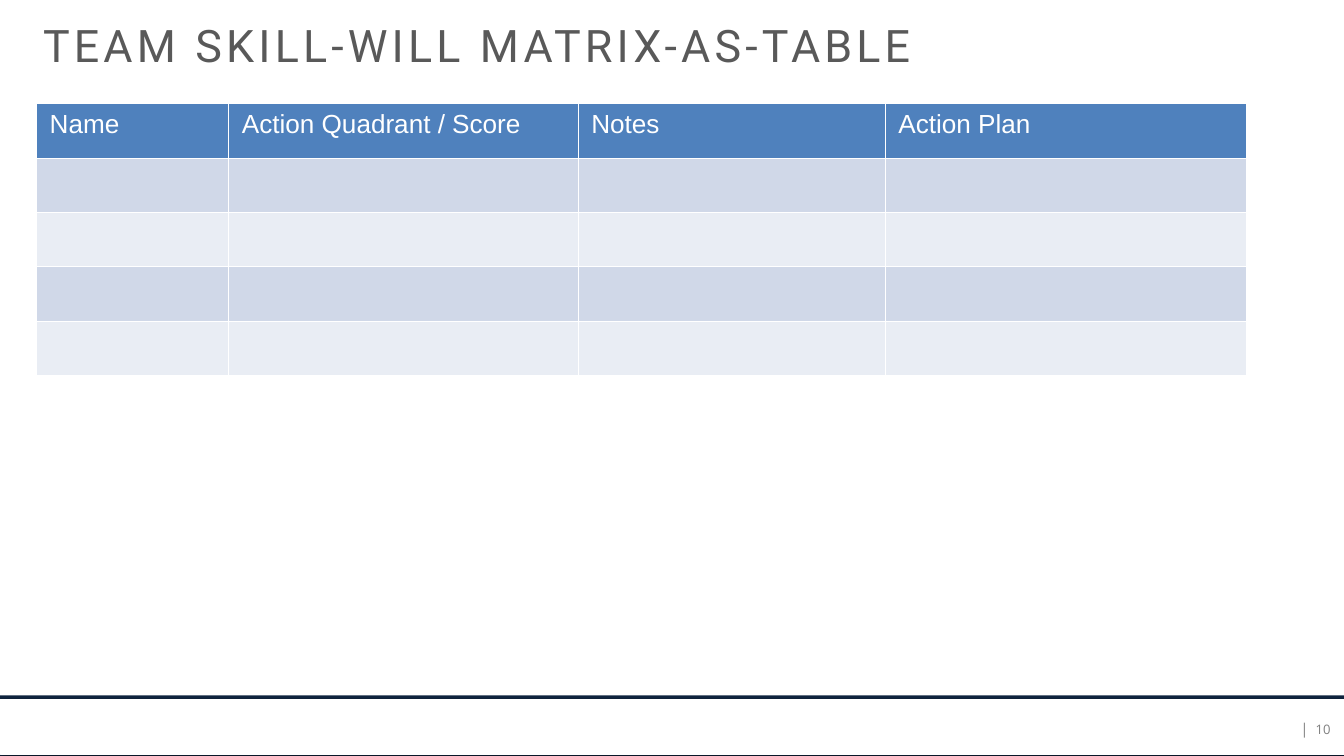
from lxml.etree import SubElement
from pptx import Presentation
from pptx.dml.color import RGBColor
from pptx.enum.shapes import MSO_SHAPE
from pptx.enum.text import MSO_ANCHOR, PP_ALIGN
from pptx.oxml.ns import qn
from pptx.util import Inches, Pt

TITLE = "TEAM SKILL-WILL MATRIX-AS-TABLE"
COLUMNS = [
    ("Name", 2.86),
    ("Action Quadrant / Score", 5.2),
    ("Notes", 4.57),
    ("Action Plan", 5.38),
]
BLANK_ROWS = 4
ROW_HEIGHT = 0.81
COLORS = {
    "navy": "0F243E",
    "white": "FFFFFF",
    "header": "4F81BD",
    "band_dark": "D0D8E8",
    "band_light": "E9EDF4",
    "title": "595959",
    "footer": "808080",
    "shadow": "000000",
}
PANELS = [
    # top, height, fill, outline, shadow
    (0, 11.25, "navy", None, True),
    (10.41, 0.82, "white", "white", True),
    (0, 10.35, "white", None, False),
]
FOOTER = [
    ("10", (19.55, 10.74, 0.25, 0.24), 14),
    ("|", (19.35, 10.71, 0.12, 0.27), 16),
]


def rgb(name):
    return RGBColor.from_string(COLORS[name])


def write(frame, text, *, size, font, color, align=None, spacing=None):
    paragraph = frame.paragraphs[0]
    paragraph.alignment = align
    run = paragraph.add_run()
    run.text = text
    run.font.size = Pt(size)
    run.font.name = font
    run.font.color.rgb = rgb(color)
    if spacing:
        run.font._element.set("spc", str(round(spacing * 100)))


def add_shadow(panel):
    effects = panel._element.spPr.find(qn("a:effectLst"))
    shadow = SubElement(
        effects, qn("a:outerShdw"), blurRad=str(Pt(3.1)), dist=str(Pt(1.8)),
        dir="5400000", rotWithShape="0",
    )
    tint = SubElement(shadow, qn("a:srgbClr"), val=COLORS["shadow"])
    SubElement(tint, qn("a:alpha"), val="35000")


def add_panel(slide, top, height, fill, outline, shadowed):
    panel = slide.shapes.add_shape(
        MSO_SHAPE.RECTANGLE, 0, Inches(top), Inches(20), Inches(height))
    panel.shadow.inherit = False
    panel.fill.solid()
    panel.fill.fore_color.rgb = rgb(fill)
    if outline:
        panel.line.color.rgb = rgb(outline)
        panel.line.width = Pt(0.75)
    else:
        panel.line.fill.background()
    if shadowed:
        add_shadow(panel)


def add_footer(slide, text, place, size):
    box = slide.shapes.add_textbox(*map(Inches, place))
    frame = box.text_frame
    frame.word_wrap = False
    frame.margin_left = frame.margin_right = frame.margin_top = frame.margin_bottom = 0
    write(frame, text, size=size, font="Open Sans", color="footer", align=PP_ALIGN.RIGHT)


def add_matrix(slide):
    row_count = BLANK_ROWS + 1
    matrix = slide.shapes.add_table(
        row_count, len(COLUMNS), Inches(0.54), Inches(1.54),
        Inches(sum(width for _, width in COLUMNS)), Inches(ROW_HEIGHT * row_count),
    ).table
    for column, (heading, width) in enumerate(COLUMNS):
        matrix.columns[column].width = Inches(width)
        for row in range(row_count):
            cell = matrix.cell(row, column)
            cell.margin_left = cell.margin_right = Inches(0.2)
            cell.margin_top = cell.margin_bottom = Inches(0.1)
            cell.fill.solid()
            band = "band_dark" if row % 2 else "band_light"
            cell.fill.fore_color.rgb = rgb(band if row else "header")
        write(matrix.cell(0, column).text_frame, heading,
              size=28, font="Arial", color="white")


def add_title(slide):
    title = slide.shapes.title
    title.left, title.top, title.width, title.height = map(Inches, (0.54, 0.21, 14.98, 0.91))
    title.text_frame.word_wrap = True
    title.text_frame.vertical_anchor = MSO_ANCHOR.TOP
    write(title.text_frame, TITLE, size=48, font="Roboto", color="title",
          align=PP_ALIGN.LEFT, spacing=4.5)
    slide.shapes._spTree.append(title._element)


def main():
    """Build the team skill-will matrix slide."""
    deck = Presentation()
    deck.slide_width, deck.slide_height = Inches(20), Inches(11.25)
    slide = deck.slides.add_slide(deck.slide_layouts[5])
    for panel in PANELS:
        add_panel(slide, *panel)
    for item in FOOTER:
        add_footer(slide, *item)
    add_matrix(slide)
    add_title(slide)
    deck.save("out.pptx")


if __name__ == "__main__":
    main()
